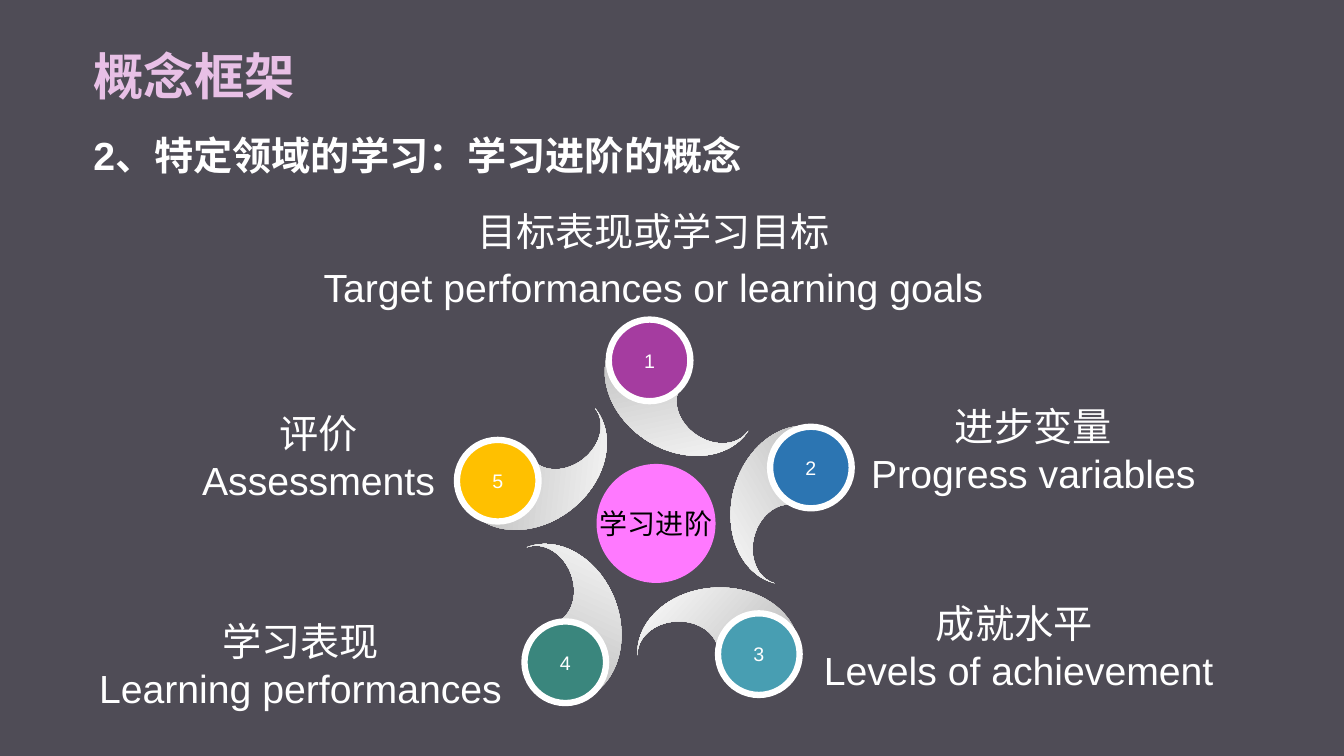
from dataclasses import dataclass
from math import cos, radians, sin

from lxml.etree import SubElement
from pptx import Presentation
from pptx.dml.color import RGBColor
from pptx.enum.shapes import MSO_SHAPE
from pptx.enum.text import MSO_ANCHOR, MSO_AUTO_SIZE, PP_ALIGN
from pptx.oxml.ns import qn
from pptx.util import Pt

WHITE = "FFFFFF"
HUB_X, HUB_Y = 468.9, 375
STEP = 72
PETAL_R, BALL_R = 90, 117.7
BALL = 58.3
WIDE, TALL = 45.4, 57.6
BEND = 0.55


@dataclass
class Label:
    left: float
    top: float
    width: float
    lines: list[str]
    space: float = 1.0


@dataclass
class Node:
    color: str
    label: Label


NODES = [
    Node("A53CA0", Label(85, 131.8, 763.2, ["目标表现或学习目标", "Target performances or learning goals"], 1.2)),
    Node("2C75B2", Label(551.5, 271.4, 373, ["进步变量", "Progress variables"])),
    Node("489EB2", Label(533.5, 411.8, 388.1, ["成就水平 ", "Levels of achievement"])),
    Node("3A867D", Label(39.6, 424.8, 349.9, ["学习表现", "Learning performances"])),
    Node("FFC000", Label(97.2, 276.5, 260.6, ["评价", "Assessments"])),
]


def rgb(code: str) -> RGBColor:
    return RGBColor.from_string(code)


def blend(fill, first: str, last: str, angle: float, start: float = 0) -> None:
    fill.gradient()
    fill.gradient_angle = angle
    for stop, code, place in zip(fill.gradient_stops, (first, last), (start, 1)):
        stop.color.rgb = rgb(code)
        stop.position = place


def write(shape, lines: list[str], *, size: float, color: str = WHITE, bold: bool = False,
          align=PP_ALIGN.CENTER, anchor=MSO_ANCHOR.MIDDLE, space: float = 1.0,
          wrap: bool = True, tight: bool = False) -> None:
    frame = shape.text_frame
    frame.auto_size = MSO_AUTO_SIZE.NONE
    frame.word_wrap = wrap
    frame.vertical_anchor = anchor
    if tight:
        frame.margin_left = frame.margin_right = frame.margin_top = frame.margin_bottom = 0
    for place, line in enumerate(lines):
        para = frame.add_paragraph() if place else frame.paragraphs[0]
        para.alignment = align
        para.line_spacing = space
        run = para.add_run()
        run.text = line
        run.font.name = "Arial"
        run.font.size = Pt(size)
        run.font.bold = bold
        run.font.color.rgb = rgb(color)


def box(slide, left: float, top: float, width: float, height: float):
    return slide.shapes.add_textbox(Pt(left), Pt(top), Pt(width), Pt(height))


def solid(slide, kind, left: float, top: float, width: float, height: float,
          color: str, edge: float = 0):
    shape = slide.shapes.add_shape(kind, Pt(left), Pt(top), Pt(width), Pt(height))
    shape.shadow.inherit = False
    shape.fill.solid()
    shape.fill.fore_color.rgb = rgb(color)
    if edge:
        shape.line.color.rgb = rgb(WHITE)
        shape.line.width = Pt(edge)
    else:
        shape.line.fill.background()
    return shape


def disc(slide, x: float, y: float, size: float, color: str, edge: float = 0):
    return solid(slide, MSO_SHAPE.OVAL, x - size / 2, y - size / 2, size, size, color, edge)


def veil(slide):
    shape = solid(slide, MSO_SHAPE.RECTANGLE, 0, 0, 960, 540, "1D1022")
    tint = next(shape.element.spPr.iter(qn("a:srgbClr")))
    SubElement(tint, qn("a:alpha"), val="40000")
    return shape


def orbit(radius: float, angle: float) -> tuple[float, float]:
    turn = radians(angle)
    return HUB_X + radius * cos(turn), HUB_Y + radius * sin(turn)


def half(mid: float, wide: float, tall: float) -> list[tuple[int, int]]:
    curve = [(BEND, -1), (1, -BEND), (1, 0), (1, BEND), (BEND, 1), (0, 1)]
    return [(Pt(WIDE + wide * x), Pt(mid + tall * y)) for x, y in curve]


def petal(slide, x: float, y: float, turn: float) -> None:
    points = (half(TALL, -WIDE, TALL)
              + half(TALL * 1.5, -WIDE / 2, -TALL / 2)
              + half(TALL / 2, WIDE / 2, -TALL / 2))
    outline = slide.shapes.build_freeform(Pt(WIDE), 0)
    outline.add_line_segments(points, close=True)
    shape = outline.convert_to_shape()
    lines = list(shape.element.spPr.iter(qn("a:lnTo")))
    for place in range(0, len(lines), 3):
        curve, *rest = lines[place:place + 3]
        curve.tag = qn("a:cubicBezTo")
        for line in rest:
            curve.append(line[0])
            line.getparent().remove(line)
    shape.left = int(Pt(x) - shape.width / 2)
    shape.top = int(Pt(y) - shape.height / 2)
    shape.rotation = turn
    shape.shadow.inherit = False
    shape.line.fill.background()
    blend(shape.fill, "B2B2B2", WHITE, 225)


def main() -> None:
    deck = Presentation()
    deck.slide_width, deck.slide_height = Pt(960), Pt(540)
    slide = deck.slides.add_slide(deck.slide_layouts[5])
    slide.background.fill.solid()
    slide.background.fill.fore_color.rgb = rgb("717579")

    title = slide.shapes.title
    veil(slide).element.addnext(title.element)
    title.left, title.top, title.width, title.height = Pt(59.6), Pt(31.9), Pt(841), Pt(47.5)
    write(title, ["概念框架"], size=36, bold=True, align=PP_ALIGN.LEFT,
          anchor=MSO_ANCHOR.BOTTOM, space=0.9)
    blend(title.text_frame.paragraphs[0].runs[0].font.fill, "E8C0E6", "B686DA", 270, 0.04)

    write(box(slide, 59.6, 94.3, 841, 56.9), ["2、特定领域的学习：学习进阶的概念"], size=28,
          bold=True, align=PP_ALIGN.LEFT, anchor=MSO_ANCHOR.TOP, space=0.9)

    write(disc(slide, 468.6, 373.9, 85, "FF79FF"), ["学习进阶"], size=20,
          color="000000", wrap=False, tight=True)

    for place, node in enumerate(NODES):
        turn = place * STEP
        petal(slide, *orbit(PETAL_R, turn - 82.9), (turn + 303.2) % 360)
        ball = disc(slide, *orbit(BALL_R, turn - 92.4), BALL, node.color, 4.5)
        write(ball, [str(place + 1)], size=14, wrap=False, tight=True)
        label = node.label
        write(box(slide, label.left, label.top, label.width, 99.4), label.lines,
              size=28, space=label.space)

    deck.save("out.pptx")


if __name__ == "__main__":
    main()
